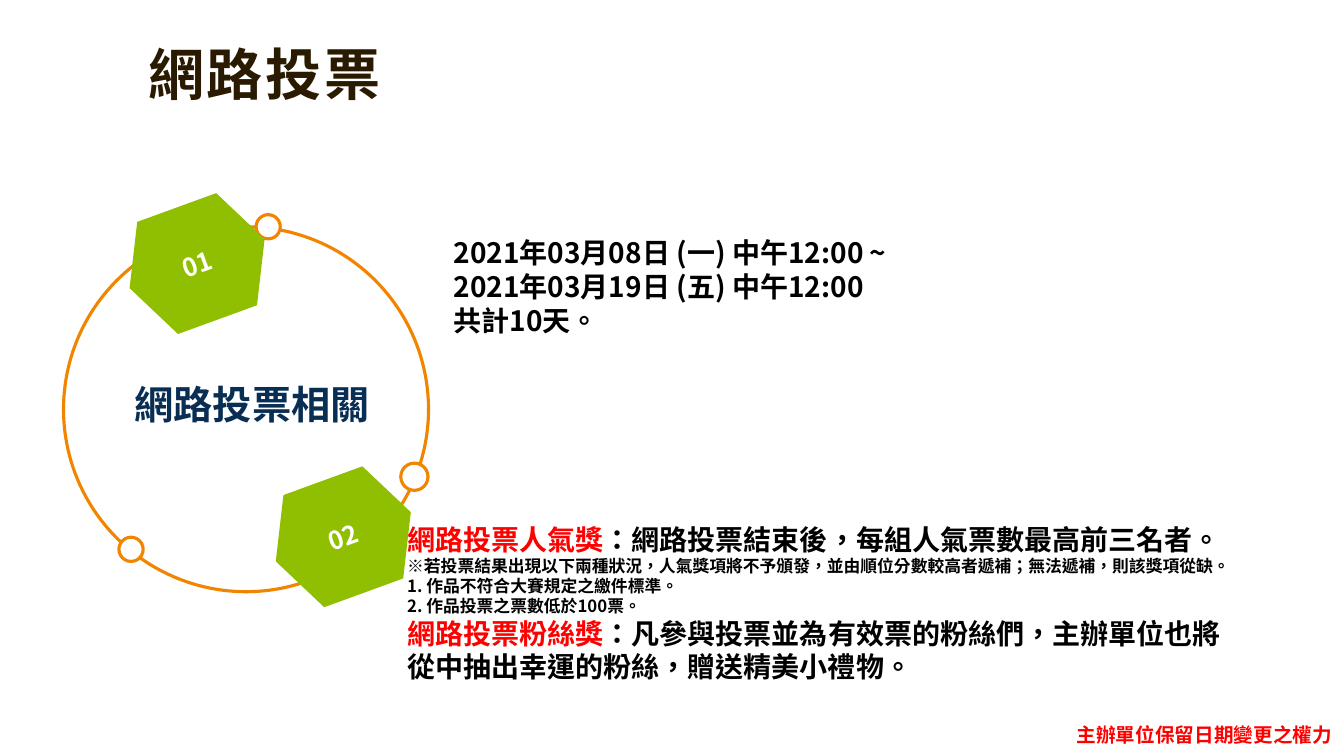
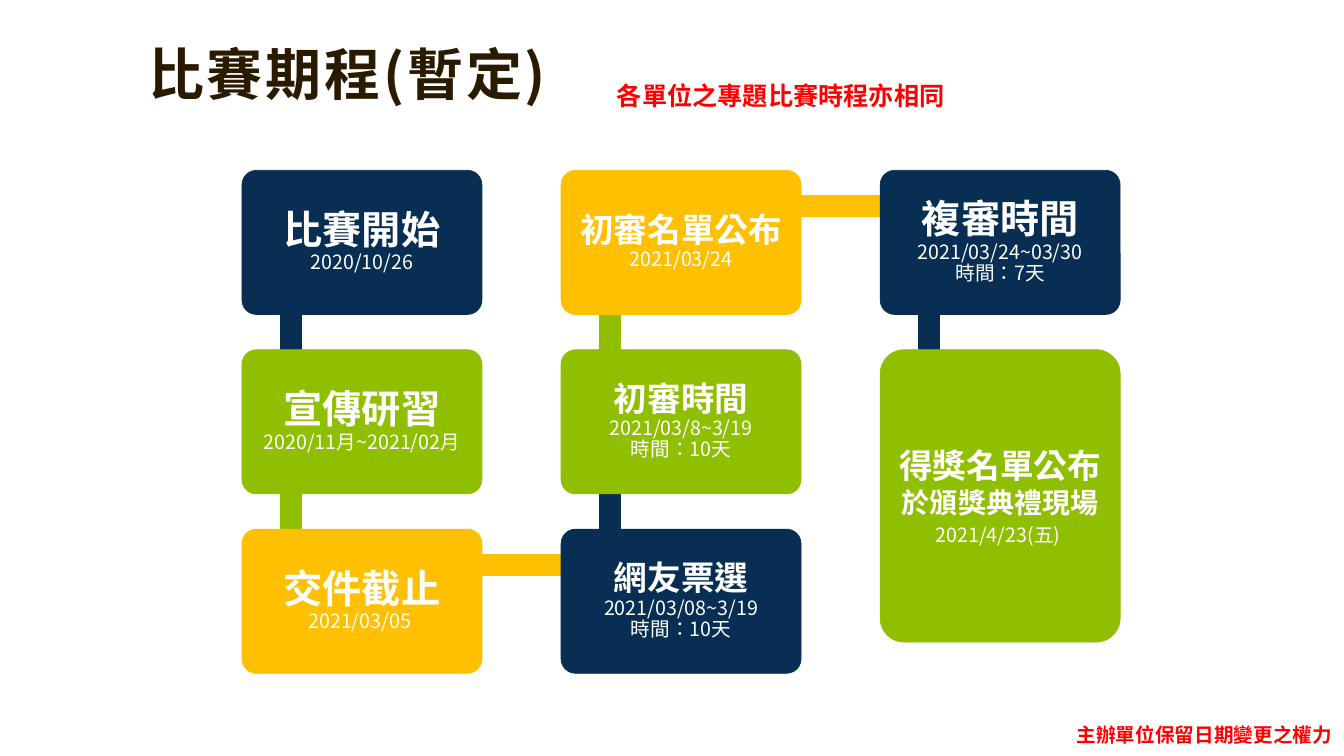
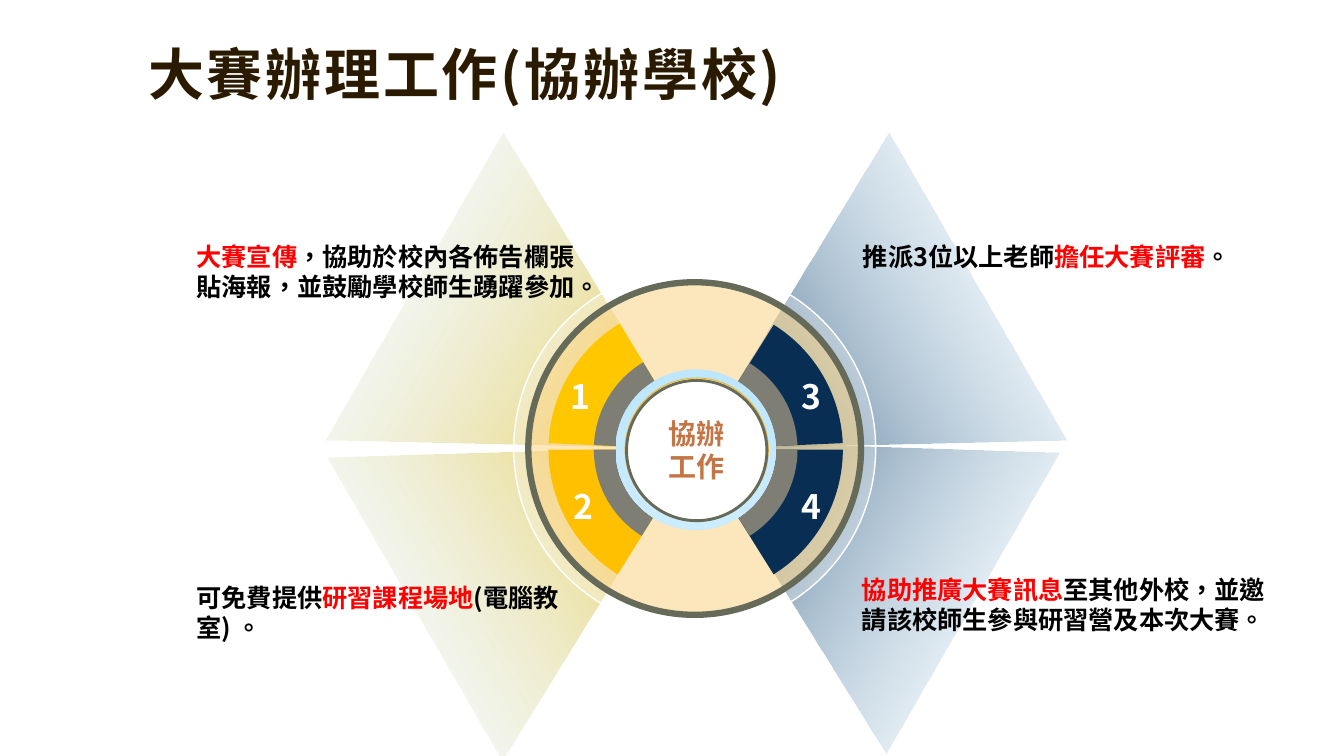
"""Build three slides about a contest: online voting, schedule and co-host work."""
from itertools import pairwise
from math import cos, radians, sin, tan

from lxml.etree import SubElement
from pptx import Presentation
from pptx.dml.color import RGBColor
from pptx.enum.lang import MSO_LANGUAGE_ID
from pptx.enum.shapes import MSO_SHAPE
from pptx.enum.text import MSO_ANCHOR, MSO_AUTO_SIZE, PP_ALIGN
from pptx.oxml.ns import qn
from pptx.util import Pt

PX = 9144
FONT = "Noto Sans CJK SC"
COLORS = {
    "title": "2A1A00", "text": "000000", "red": "FF0000", "white": "FFFFFF",
    "navy": "082E54", "green": "90BF01", "yellow": "FFC001", "gold": "FFC700",
    "orange": "F28500", "sky": "CCECFF", "light": "BDE6FF", "sand": "FBD17B",
    "olive": "656A59", "gray": "7E7E74", "amber": "F8B323", "brown": "C47546",
}


def px(*values):
    """Turn px lengths into EMU."""
    return [round(v * PX) for v in values]


def rgb(name):
    """Return the named colour."""
    return RGBColor.from_string(COLORS[name])


def add_paragraph(tf, runs, size, color="text", bold=True, align=PP_ALIGN.LEFT,
                  spacing=None, before=None, font=FONT, spc=None):
    """Write one paragraph; runs is a string or a list of (text, colour)."""
    p = tf.add_paragraph() if tf.text else tf.paragraphs[0]
    p.alignment = align
    if spacing:
        p.line_spacing = spacing
    if before:
        p.space_before = Pt(before)
    p.font.size, p.font.bold, p.font.name = Pt(size), bold, font
    mixed = not isinstance(runs, str)
    if not mixed:
        p.font.color.rgb = rgb(color)
    props = p._p.pPr.find(qn("a:defRPr"))
    SubElement(props, qn("a:ea"), typeface=FONT)
    if spc:
        props.set("spc", str(spc))
    for text, run_color in runs if mixed else [(runs, None)]:
        r = p.add_run()
        r.text = text
        r.font.language_id = MSO_LANGUAGE_ID.TRADITIONAL_CHINESE
        if run_color:
            r.font.color.rgb = rgb(run_color)


def add_text(s, at, lines, size, color="text", wrap=True, **style):
    """Add a text box with paragraphs of one style."""
    tf = s.shapes.add_textbox(*px(*at)).text_frame
    tf.word_wrap = wrap
    for line in lines:
        add_paragraph(tf, line, size, color, **style)


def paint(sp, fill=None, line=None, width=1):
    """Set fill and outline and drop the shadow."""
    sp.shadow.inherit = False
    if fill:
        sp.fill.solid()
        sp.fill.fore_color.rgb = rgb(fill)
    else:
        sp.fill.background()
    if line:
        sp.line.color.rgb = rgb(line)
        sp.line.width = Pt(width)
    else:
        sp.line.fill.background()
    return sp


def add_shape(s, kind, at, fill=None, line=None, width=1):
    """Add a painted preset shape."""
    return paint(s.shapes.add_shape(kind, *px(*at)), fill, line, width)


def set_alpha(sp, percent):
    """Set the opacity of the last fill colour."""
    props = sp._element.spPr
    fill = props.find(qn("a:gradFill"))
    if fill is None:
        fill = props.find(qn("a:solidFill"))
    color = list(fill.iter(qn("a:srgbClr")))[-1]
    SubElement(color, qn("a:alpha"), val=str(percent * 1000))


def add_gradient(sp, start, end):
    """Fill a shape from top to bottom."""
    sp.fill.gradient()
    sp.fill.gradient_angle = 270
    for stop, name in zip(sp.fill.gradient_stops, (start, end)):
        stop.color.rgb = rgb(name)


def add_circle(s, cx, cy, d, fill, line=None, width=1):
    """Add a circle by centre and diameter."""
    return add_shape(s, MSO_SHAPE.OVAL, (cx - d / 2, cy - d / 2, d, d), fill, line, width)


def add_wedge(s, cx, cy, radius, start, end, fill):
    """Add a circle sector between two angles in degrees, its arc one Bezier curve."""
    a, b = radians(start), radians(end)
    k = 4 / 3 * tan((b - a) / 4)
    points = [(cos(a), sin(a)),
              (cos(a) - k * sin(a), sin(a) + k * cos(a)),
              (cos(b) + k * sin(b), sin(b) - k * cos(b)),
              (cos(b), sin(b)), (0, 0)]
    first, *rest = [px(cx + radius * x, cy + radius * y) for x, y in points]
    builder = s.shapes.build_freeform(*first)
    builder.add_line_segments(rest, close=True)
    sp = paint(builder.convert_to_shape(), fill)
    path = next(sp._element.iter(qn("a:path")))
    lines = path.findall(qn("a:lnTo"))[:3]
    curve = SubElement(path, qn("a:cubicBezTo"))
    path.insert(1, curve)
    for line in lines:
        curve.append(line[0])
        path.remove(line)


def add_slide(prs, title):
    """Add a title-only slide with the shared title style."""
    s = prs.slides.add_slide(prs.slide_layouts[5])
    sp = s.shapes.title
    sp.left, sp.top, sp.width, sp.height = px(137, 42, 1113, 163)
    tf = sp.text_frame
    tf.word_wrap, tf.auto_size = True, MSO_AUTO_SIZE.NONE
    tf.vertical_anchor = MSO_ANCHOR.TOP
    add_paragraph(tf, title, 40, "title", spacing=0.9, spc=200)
    return s


def add_notice(s):
    """Add the shared red notice at the lower right."""
    add_text(s, (1058, 712, 275, 34), ["主辦單位保留日期變更之權力"], 14, "red",
             wrap=False, font="Calibri")


def add_hexagon(s, left, top, label):
    """Add a tilted numbered hexagon."""
    sp = add_shape(s, MSO_SHAPE.HEXAGON, (left, top, 141, 117), "green", "green")
    sp.rotation = 340
    sp.text_frame.vertical_anchor = MSO_ANCHOR.MIDDLE
    add_paragraph(sp.text_frame, label, 18, "white", align=PP_ALIGN.CENTER)


def build_voting(prs):
    """Build the online voting slide."""
    s = add_slide(prs, "網路投票")
    for cx, cy, d in [(244, 406, 362), (411, 473, 27), (266, 225, 24), (130, 545, 24)]:
        add_circle(s, cx, cy, d, "white", "orange", 2.25)
    add_hexagon(s, 125, 203, "01")
    add_hexagon(s, 270, 474, "02")
    add_text(s, (440, 229, 794, 112), [
        "2021年03月08日 (一) 中午12:00 ~",
        "2021年03月19日 (五) 中午12:00",
        "共計10天。"], 20)
    add_text(s, (122, 372, 256, 57), ["網路投票相關"], 28, "navy", wrap=False,
             align=PP_ALIGN.CENTER)
    tf = s.shapes.add_textbox(*px(394, 513, 938, 172)).text_frame
    tf.word_wrap = True
    for runs, size in [
        ([("網路投票人氣獎", "red"),
          ("：網路投票結束後，每組人氣票數最高前三名者。", "text")], 20),
        ("※若投票結果出現以下兩種狀況，人氣獎項將不予頒發，並由順位分數較高者遞補；無法遞補，則該獎項從缺。", 12),
        ("1. 作品不符合大賽規定之繳件標準。", 12),
        ("2. 作品投票之票數低於100票。", 12),
        ([("網路投票粉絲獎", "red"),
          ("：凡參與投票並為有效票的粉絲們，主辦單位也將", "text")], 20),
        ("從中抽出幸運的粉絲，贈送精美小禮物。", 20),
    ]:
        add_paragraph(tf, runs, size)
    add_notice(s)


def add_bar(s, start, end, fill):
    """Add a straight bar between two points."""
    (x0, y0), (x1, y1) = start, end
    if x0 == x1:
        at = (x0 - 10, min(y0, y1), 21, abs(y1 - y0))
    else:
        at = (x0, y0 - 10, x1 - x0, 21)
    add_shape(s, MSO_SHAPE.RECTANGLE, at, fill, fill, 0.5)


def add_card(s, left, top, height, fill, head, size, details, subhead=None):
    """Add a rounded card with a heading and detail lines."""
    sp = add_shape(s, MSO_SHAPE.ROUNDED_RECTANGLE, (left, top, 238, height), fill, fill, 0.5)
    sp.adjustments[0] = 0.1
    tf = sp.text_frame
    tf.word_wrap, tf.vertical_anchor = True, MSO_ANCHOR.MIDDLE
    tf.margin_left = tf.margin_right = (12 if size == 28 else 10) * PX
    center = {"color": "white", "align": PP_ALIGN.CENTER}
    add_paragraph(tf, head, size, spacing=None if subhead else 0.9, **center)
    if subhead:
        add_paragraph(tf, subhead, 20, **center)
    for line in details:
        add_paragraph(tf, line, 14, bold=False, spacing=0.9,
                      before=5 if subhead else None, **center)


def build_schedule(prs):
    """Build the schedule slide as a winding row of cards."""
    s = add_slide(prs, "比賽期程(暫定)")
    steps = [
        (0, 0, "navy", "比賽開始", 28, ["2020/10/26"]),
        (0, 1, "green", "宣傳研習", 28, ["2020/11月~2021/02月"]),
        (0, 2, "yellow", "交件截止", 28, ["2021/03/05 "]),
        (1, 2, "navy", "網友票選", 24, ["2021/03/08~3/19", "時間：10天"]),
        (1, 1, "green", "初審時間", 24, ["2021/03/8~3/19", "時間：10天"]),
        (1, 0, "yellow", "初審名單公布", 24, ["2021/03/24"]),
        (2, 0, "navy", "複審時間", 28, ["2021/03/24~03/30", "時間：7天"]),
        (2, 1, "green", "得獎名單公布", 24, ["2021/4/23(五) "], "於頒獎典禮現場"),
    ]
    corners = [(240 + 316.5 * step[0], 169 + 178 * step[1]) for step in steps]
    joints = [(x + 48, y + 35) for x, y in corners]
    for (start, end), step in zip(pairwise(joints), steps):
        add_bar(s, start, end, step[2])
    for (x, y), step in zip(corners, steps):
        add_card(s, x, y, 290 if step is steps[-1] else 143, *step[2:])
    add_text(s, (602, 75, 348, 40), ["各單位之專題比賽時程亦相同"], 18, "red", wrap=False)
    add_notice(s)


def add_number(s, left, top, label):
    """Add a clear rounded label with a white number."""
    sp = add_shape(s, MSO_SHAPE.ROUNDED_RECTANGLE, (left, top, 70, 36))
    sp.adjustments[0] = 0.5
    tf = sp.text_frame
    tf.word_wrap, tf.vertical_anchor = False, MSO_ANCHOR.MIDDLE
    add_paragraph(tf, label, 24, "white", align=PP_ALIGN.CENTER)


def build_work(prs):
    """Build the co-host work slide around a central dial."""
    s = add_slide(prs, "大賽辦理工作(協辦學校)")
    for left, top, width, rotation, color in [
        (654, 203, 352, 240, "navy"), (374, 203, 352, 120, "yellow"),
        (653, 357, 344, 300, "navy"), (378, 363, 346, 60, "yellow"),
    ]:
        sp = add_shape(s, MSO_SHAPE.ISOSCELES_TRIANGLE, (left, top, width, 322))
        sp.rotation = rotation
        add_gradient(sp, color, "sky")
        set_alpha(sp, 0)
    cx, cy = 690, 446
    set_alpha(add_circle(s, cx - 1, cy - 1, 359, "white", "white"), 25)
    set_alpha(add_circle(s, cx - 1, cy - 1, 330, "sand", "olive", 4.5), 50)
    sectors = [(-58, -2.5, "navy"), (0, 58, "navy"),
               (182.5, 239, "gold"), (122, 180, "yellow")]
    for start, end, color in sectors:
        add_wedge(s, cx, cy, 146, start, end, color)
    for start, end, _ in sectors:
        add_wedge(s, cx, cy, 101, start, end, "gray")
    add_gradient(add_circle(s, cx, cy, 159, "sky"), "light", "sky")
    add_circle(s, cx + 1, cy, 142, "white", "amber", 0.75)
    ring = add_shape(s, MSO_SHAPE.DONUT, (620, 376, 142, 142), "olive")
    ring.adjustments[0] = 0.02
    for label, left, top in [("2", 544, 484), ("4", 770, 484),
                             ("3", 770, 375), ("1", 541, 375)]:
        add_number(s, left, top, label)
    add_text(s, (629, 408, 124, 77), ["協辦", "工作"], 20, "brown", align=PP_ALIGN.CENTER)
    for at, runs in [
        ((185, 234, 408, 101),
         [("大賽宣傳", "red"),
          ("，協助於校內各佈告欄張貼海報，並鼓勵學校師生踴躍參加。", "text")]),
        ((185, 573, 408, 71),
         [("可免費提供", "text"), ("研習課程場地", "red"), ("(電腦教室) 。", "text")]),
        ((846, 234, 408, 40),
         [("推派3位以上老師", "text"), ("擔任大賽評審", "red"), ("。", "text")]),
        ((845, 565, 435, 71),
         [("協助推廣大賽訊息", "red"),
          ("至其他外校，並邀請該校師生參與研習營及本次大賽。", "text")]),
    ]:
        add_text(s, at, [runs], 18)


def main():
    """Build and save the presentation."""
    prs = Presentation()
    prs.slide_width, prs.slide_height = px(1333, 750)
    build_voting(prs)
    build_schedule(prs)
    build_work(prs)
    prs.save("out.pptx")


if __name__ == "__main__":
    main()
